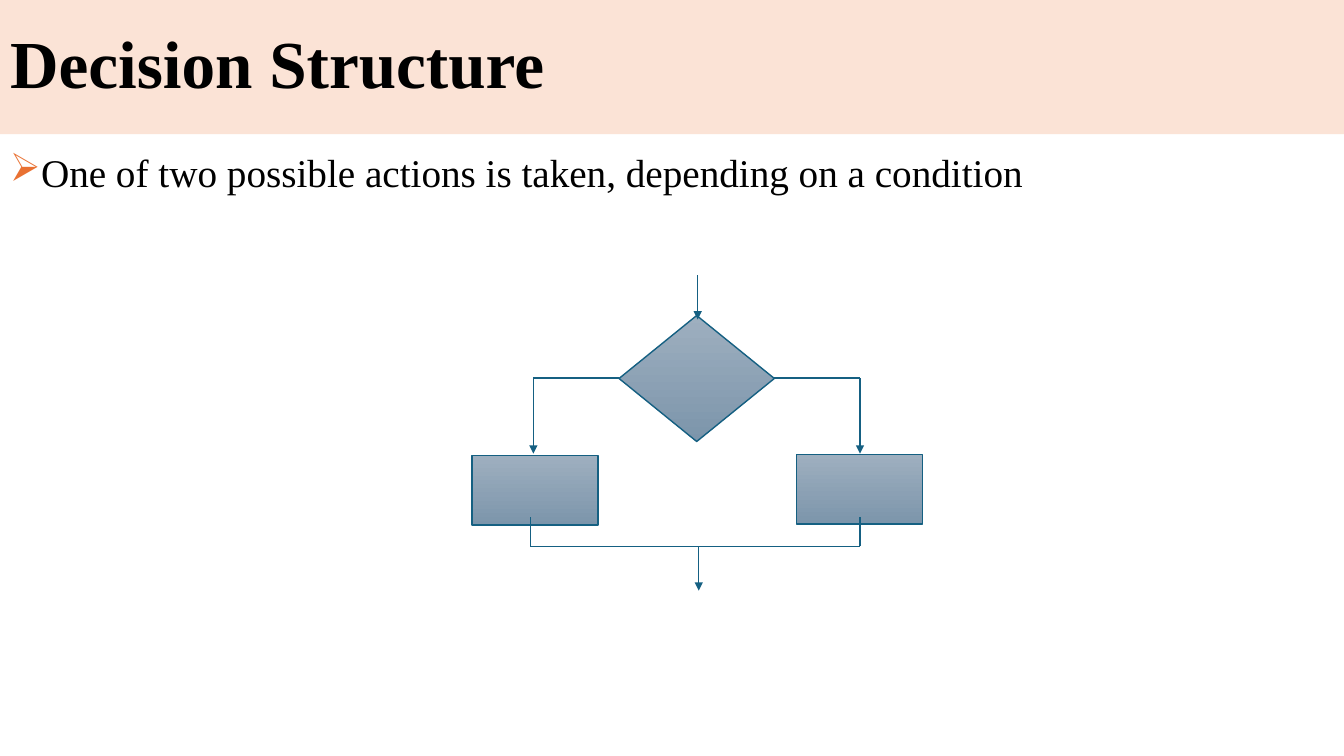
from lxml import etree
from pptx import Presentation
from pptx.dml.color import RGBColor
from pptx.enum.shapes import MSO_CONNECTOR, MSO_SHAPE
from pptx.enum.text import MSO_ANCHOR, MSO_AUTO_SIZE, PP_ALIGN
from pptx.oxml.ns import qn
from pptx.util import Inches, Pt

STRAIGHT = MSO_CONNECTOR.STRAIGHT
RECTANGLE = MSO_SHAPE.RECTANGLE
DECISION = MSO_SHAPE.FLOWCHART_DECISION
MIDDLE = MSO_ANCHOR.MIDDLE
TOP = MSO_ANCHOR.TOP
NO_FIT = MSO_AUTO_SIZE.NONE
LEFT = PP_ALIGN.LEFT

BLACK = "000000"
PEACH = "FBE3D6"
ORANGE = "E97132"
TEAL = "156082"
GRADIENT = ("9EAFBF", "7C95AB")
TITLE_FONT = {"name": "Times New Roman", "size": Pt(48), "bold": True}
BODY_FONT = {"name": "Times New Roman", "size": Pt(28), "bold": False}
LINE_WIDTH = Pt(1)


def colour(value):
    return RGBColor.from_string(value)


def place(shape, box):
    for name, value in zip(("left", "top", "width", "height"), box):
        setattr(shape, name, Inches(value))


def write(shape, text, font, anchor):
    frame = shape.text_frame
    frame.word_wrap = True
    frame.auto_size = NO_FIT
    frame.vertical_anchor = anchor
    para = frame.paragraphs[0]
    para.alignment = LEFT
    para.line_spacing = 0.9
    span = para.add_run()
    span.text = text
    for name, value in font.items():
        setattr(span.font, name, value)
    span.font.color.rgb = colour(BLACK)
    return para


def add_bullet(para, symbol, tint):
    properties = para._p.get_or_add_pPr()
    properties.set("marL", str(Inches(0.25)))
    properties.set("indent", str(Inches(-0.25)))
    bullet_colour = etree.SubElement(properties, qn("a:buClr"))
    etree.SubElement(bullet_colour, qn("a:srgbClr"), val=tint)
    etree.SubElement(properties, qn("a:buChar"), char=symbol)


def add_title(page, box):
    title = page.shapes.title
    place(title, box)
    title.fill.solid()
    title.fill.fore_color.rgb = colour(PEACH)
    write(title, "Decision Structure", TITLE_FONT, MIDDLE)


def add_body(page, box):
    body = page.shapes.add_textbox(*map(Inches, box))
    text = "One of two possible actions is taken, depending on a condition"
    para = write(body, text, BODY_FONT, TOP)
    para.space_before = Pt(10)
    add_bullet(para, "➢", ORANGE)


def add_node(group, kind, box):
    node = group.shapes.add_shape(kind, *map(Inches, box))
    node.shadow.inherit = False
    node.fill.gradient()
    node.fill.gradient_angle = 270
    for stop, tint in zip(node.fill.gradient_stops, GRADIENT):
        stop.color.rgb = colour(tint)
    node.line.color.rgb = colour(TEAL)
    node.line.width = LINE_WIDTH


def add_line(group, start, end, arrow=False):
    line = group.shapes.add_connector(STRAIGHT, *map(Inches, start + end))
    line.line.color.rgb = colour(TEAL)
    line.line.width = LINE_WIDTH
    if arrow:
        etree.SubElement(line.line._get_or_add_ln(), qn("a:tailEnd"), type="triangle")
    etree.SubElement(line._element.spPr, qn("a:effectLst"))


def add_flowchart(page, box):
    left, top, width, height = box
    group = page.shapes.add_group_shape()
    action_width, action_height = 1.25, 0.69
    diamond_left, diamond_right = left + 1.46, left + 3
    branch_y, action_y = top + 1.02, top + 1.77
    exit_y, join_y = top + 2.4, top + 2.69
    entry_x, join_x = left + 2.24, left + 2.25
    right_x = left + 3.85

    add_node(group, RECTANGLE, (left, top + 1.79, action_width, action_height))
    add_node(group, DECISION, (diamond_left, top + 0.4, 1.54, 1.25))
    add_node(group, RECTANGLE,
             (left + width - action_width, top + 1.78, action_width, action_height))

    branches = ((diamond_left, left + 0.61, left + 0.58), (diamond_right, right_x, right_x))
    for corner_x, entry, leave in branches:
        add_line(group, (corner_x, branch_y), (entry, branch_y))
        add_line(group, (entry, branch_y), (entry, action_y), arrow=True)
        add_line(group, (leave, exit_y), (leave, join_y))
    add_line(group, (right_x, join_y), (left + 0.58, join_y))
    add_line(group, (join_x, join_y), (join_x, top + height), arrow=True)
    add_line(group, (entry_x, top), (entry_x, top + 0.44), arrow=True)


def main():
    deck = Presentation()
    deck.slide_width = Inches(13.33)
    deck.slide_height = Inches(7.5)
    page = deck.slides.add_slide(deck.slide_layouts[5])
    add_title(page, (0, 0, 13.33, 1.33))
    add_body(page, (0, 1.47, 13.33, 5.88))
    add_flowchart(page, (4.68, 2.73, 4.47, 3.13))
    deck.save("out.pptx")


if __name__ == "__main__":
    main()
